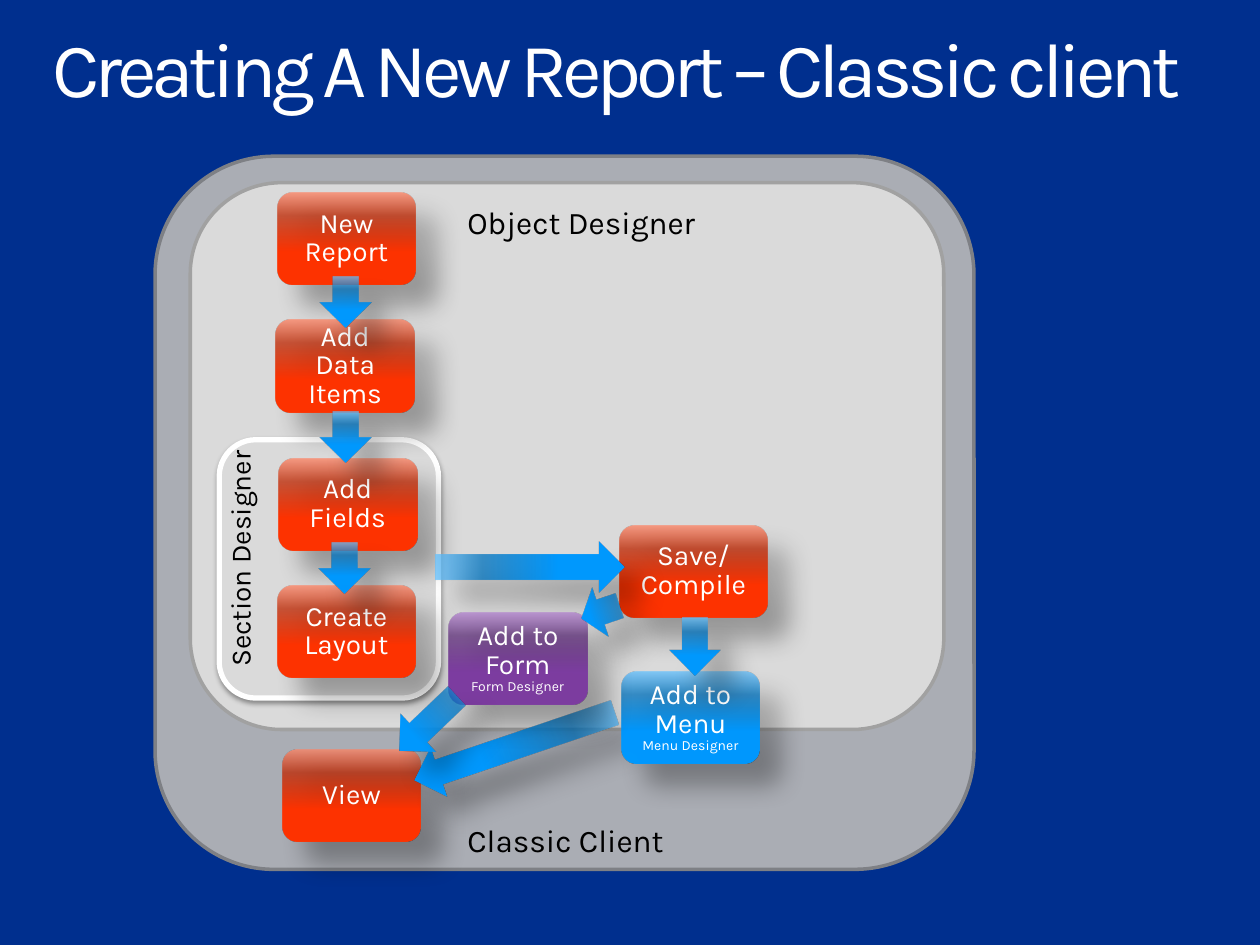
"""Build the slide on creating a new report in the classic client."""
from lxml.etree import SubElement
from pptx import Presentation
from pptx.dml.color import RGBColor
from pptx.enum.shapes import MSO_SHAPE
from pptx.enum.text import MSO_ANCHOR, PP_ALIGN
from pptx.oxml.ns import qn
from pptx.util import Pt

NAVY = RGBColor(0x00, 0x2F, 0x8E)
WHITE = RGBColor(0xFF, 0xFF, 0xFF)
BLACK = RGBColor(0x00, 0x00, 0x00)
STEEL = RGBColor(0xAA, 0xAD, 0xB4)
SLATE = RGBColor(0x7E, 0x80, 0x85)
PALE = RGBColor(0xDA, 0xDA, 0xDA)
GREY = RGBColor(0xA1, 0xA1, 0xA1)
RED = [RGBColor(0xFF, 0x33, 0x00), RGBColor(0xBF, 0x26, 0x00), RGBColor(0xFF, 0x85, 0x66)]
BLUE = [RGBColor(0x00, 0x99, 0xFF), RGBColor(0x00, 0x73, 0xBF), RGBColor(0x66, 0xC2, 0xFF)]
PLUM = [RGBColor(0x7D, 0x3D, 0xA1), RGBColor(0x5E, 0x2E, 0x79), RGBColor(0xB3, 0x82, 0xD0)]

FONT = "Karla"
BOX_W, BOX_H, ARROW_W = 79.2, 52.6, 29.5
DEEP = (30, 15, 18, 45)
SOFT = (38, 3.1, 1.6, 90)
INSET = {"margin_left": Pt(8.64), "margin_right": Pt(8.64),
         "margin_top": Pt(4.32), "margin_bottom": Pt(4.32),
         "vertical_anchor": MSO_ANCHOR.MIDDLE}
FLUSH = dict.fromkeys(["margin_left", "margin_right", "margin_top", "margin_bottom"], 0)

TITLE = ("Creating A New Report – Classic client", 30.2, 18, 660, 48.2)
PANELS = [
    (88.6, 89.3, 468, 407.5, STEEL, SLATE, 2),
    (108.7, 104.4, 430.6, 312.5, PALE, GREY, 2),
]
LABELS = [
    ("Object Designer", 260, 116, 173, 26),
    ("Classic Client", 260, 468.7, 135.4, 26),
]
SECTION = (125.3, 251.3, 125.3, 147.6, PALE, WHITE, 3)
SIDE = ("Section Designer", 126.7, 213.1, 31, 175)
STEPS = [
    ([("Add Fields", 16)], 159.1, 262.1, BOX_W, RED),
    ([("Create Layout", 16)], 158.4, 334.8, BOX_W, RED),
    ([("Save/", 16), ("Compile", 16)], 354.2, 300.2, 84.2, RED),
    ([("View", 16)], 161.3, 428.4, BOX_W, RED),
    ([("New Report", 16)], 158.4, 110.2, BOX_W, RED),
    ([("Add Data Items", 16)], 157.7, 182.9, BOX_W, RED),
]
FLOWS = [
    (182.9, 158.4, 28.8, 0),
    (182.9, 235.4, 28.8, 0),
    (182.2, 310.3, 28.8, 0),
    (288, 270, 108, 270),
    (279.4, 366.5, 120.2, 71.4),
]
MENU = ([("Add to Menu", 16), ("Menu Designer", 8)], 355, 383.8, BOX_W, BLUE)
DOWN = (382.3, 352.8, 33.1, 0)
FORM = ([("Add to Form", 16), ("Form Designer", 8)], 256.3, 349.9, BOX_W, PLUM)
LINKS = [(328.3, 338.4, 23, 71.4), (229.7, 391, 44.6, 46.7)]


def apply(item, form):
    for key, val in form.items():
        setattr(item, key, val)


def tint(dad, hue, alpha=100):
    node = SubElement(dad, qn("a:srgbClr"), val=str(hue))
    if alpha < 100:
        SubElement(node, qn("a:alpha"), val=str(alpha * 1000))


def shade(shape, alpha, blur, dist, angle):
    shape.shadow.inherit = False
    glow = SubElement(shape.element.spPr.find(qn("a:effectLst")), qn("a:outerShdw"),
                      blurRad=str(Pt(blur)), dist=str(Pt(dist)),
                      dir=str(angle * 60000), algn="tl", rotWithShape="0")
    tint(glow, BLACK, alpha)


def gloss(shape, hues):
    base, dark, light = hues
    shape.fill.gradient()
    grad = shape.element.spPr.find(qn("a:gradFill"))
    for child in list(grad):
        grad.remove(child)
    grad.set("rotWithShape", "1")
    stops = SubElement(grad, qn("a:gsLst"))
    for place, hue, alpha in [(0, base, 100), (35, base, 100), (75, dark, 75), (100, light, 75)]:
        tint(SubElement(stops, qn("a:gs"), pos=str(place * 1000)), hue, alpha)
    SubElement(grad, qn("a:lin"), ang=str(270 * 60000), scaled="0")
    shape.line.fill.background()
    shade(shape, *DEEP)


def write(frame, lines, hue, gap=0.85, align=PP_ALIGN.LEFT):
    frame.word_wrap = True
    for num, (text, size) in enumerate(lines):
        para = frame.add_paragraph() if num else frame.paragraphs[0]
        apply(para, {"line_spacing": gap, "alignment": align})
        run = para.add_run()
        run.text = text
        apply(run.font, {"name": FONT, "size": Pt(size)})
        run.font.color.rgb = hue


def draw(slide, kind, *area):
    return slide.shapes.add_shape(kind, *map(Pt, area))


def label(slide, text, *area, size=18, hue=BLACK, gap=0.85):
    frame = slide.shapes.add_textbox(*map(Pt, area)).text_frame
    write(frame, [(text, size)], hue, gap)
    return frame


def panel(slide, left, top, width, height, fill, edge, weight):
    shape = draw(slide, MSO_SHAPE.ROUNDED_RECTANGLE, left, top, width, height)
    shape.shadow.inherit = False
    shape.fill.solid()
    shape.fill.fore_color.rgb = fill
    shape.line.color.rgb = edge
    shape.line.width = Pt(weight)
    return shape


def step(slide, lines, left, top, width, hues):
    shape = draw(slide, MSO_SHAPE.ROUNDED_RECTANGLE, left, top, width, BOX_H)
    gloss(shape, hues)
    apply(shape.text_frame, INSET)
    write(shape.text_frame, lines, WHITE, align=PP_ALIGN.CENTER)


def arrow(slide, left, top, height, turn):
    shape = draw(slide, MSO_SHAPE.DOWN_ARROW, left, top, ARROW_W, height)
    shape.rotation = turn
    gloss(shape, BLUE)


def main():
    deck = Presentation()
    apply(deck, {"slide_width": Pt(720), "slide_height": Pt(540)})
    slide = deck.slides.add_slide(deck.slide_layouts[6])
    slide.background.fill.solid()
    slide.background.fill.fore_color.rgb = NAVY

    title = label(slide, *TITLE, size=44, hue=WHITE, gap=0.9)
    apply(title, FLUSH)
    title.paragraphs[0].runs[0].font._element.set("spc", "-300")
    for item in PANELS:
        panel(slide, *item)
    for item in LABELS:
        label(slide, *item)
    shade(panel(slide, *SECTION), *SOFT)
    side = label(slide, *SIDE, size=16)
    side._txBody.bodyPr.set("vert", "vert270")
    for item in STEPS:
        step(slide, *item)
    for item in FLOWS:
        arrow(slide, *item)
    step(slide, *MENU)
    arrow(slide, *DOWN)
    step(slide, *FORM)
    for item in LINKS:
        arrow(slide, *item)
    deck.save("out.pptx")


if __name__ == "__main__":
    main()
